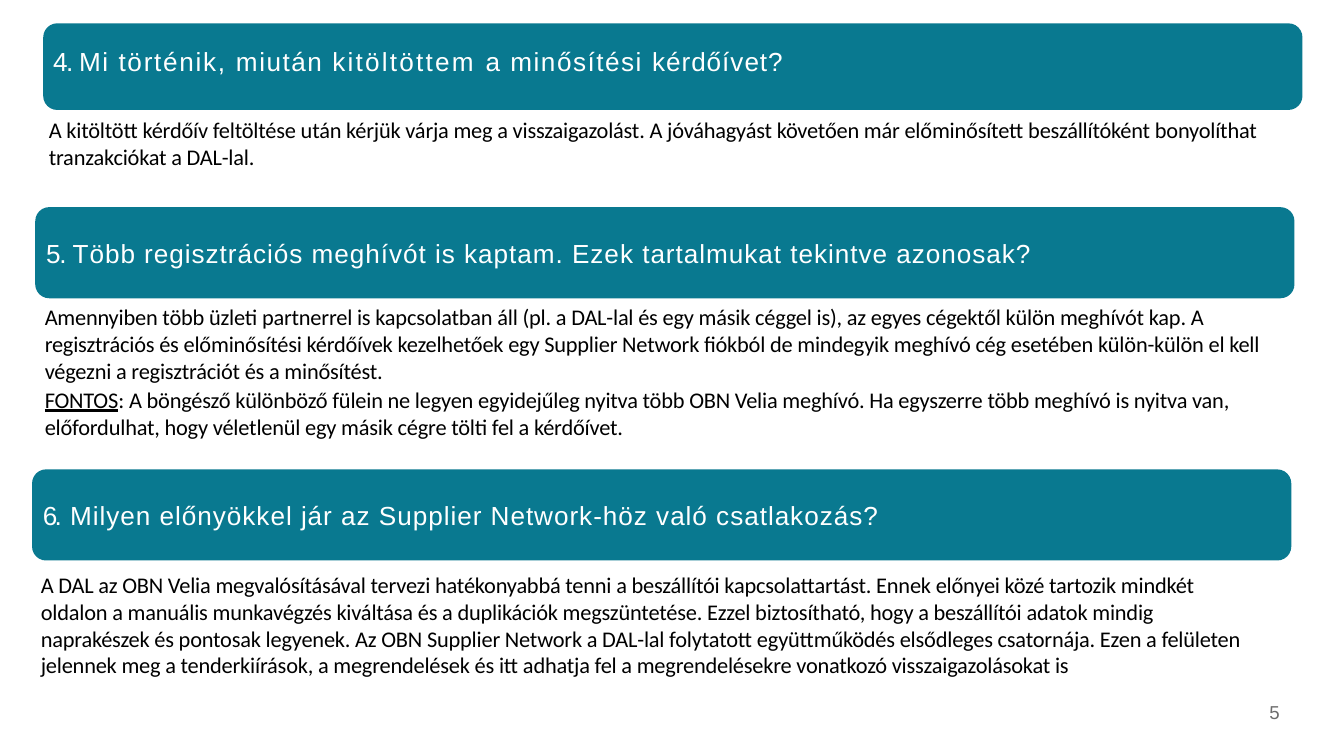
from pptx import Presentation
from pptx.dml.color import RGBColor
from pptx.enum.shapes import MSO_SHAPE
from pptx.enum.text import MSO_ANCHOR, MSO_AUTO_SIZE, PP_ALIGN
from pptx.util import Pt

COLORS = {"banner": "097990", "question": "FFFFFF", "answer": "000000", "page": "6D6D6D"}
BANNER_WIDTH = 674.6
CORNER_RADIUS = 7.5

QUESTIONS = [
    {
        "banner": (23.2, 12.5, 46.4),
        "question_at": (27.4, 22.3, 658, 18),
        "question": [("4. ", -0.8), ("Mi ", 0.8), ("történik, ", 0.9), ("miután ", 0.8),
                     ("kitöltöttem ", 1.2), ("a minősítési ", 0.8), ("kérdőívet?", 0.5)],
        "answer_at": (25.2, 60.5, 652.3, 30.2),
        "answer": [("", "A kitöltött kérdőív feltöltése után kérjük várja meg a visszaigazolást. "
                        "A jóváhagyást követően már előminősített beszállítóként bonyolíthat "
                        "tranzakciókat a DAL-lal.")],
    },
    {
        "banner": (18.9, 111, 48.8),
        "question_at": (23.7, 125.3, 655, 18),
        "question": [("5. ", -0.7),
                     ("Több regisztrációs meghívót is kaptam. Ezek tartalmukat tekintve azonosak?", 0.5)],
        "answer_at": (23, 160.6, 654.5, 75),
        "answer": [("", "Amennyiben több üzleti partnerrel is kapcsolatban áll (pl. a DAL-lal és egy "
                        "másik céggel is), az egyes cégektől külön meghívót kap. A regisztrációs és "
                        "előminősítési kérdőívek kezelhetőek egy Supplier Network fiókból de mindegyik "
                        "meghívó cég esetében külön-külön el kell végezni a regisztrációt és a minősítést."),
                   ("FONTOS", ": A böngésző különböző fülein ne legyen egyidejűleg nyitva több OBN Velia "
                              "meghívó. Ha egyszerre több meghívó is nyitva van, előfordulhat, hogy "
                              "véletlenül egy másik cégre tölti fel a kérdőívet.")],
    },
    {
        "banner": (17.2, 251.5, 48.8),
        "question_at": (22, 265.8, 578, 18),
        "question": [("6.", -1.5),
                     (" Milyen előnyökkel jár az Supplier Network-höz való csatlakozás?", 0.5)],
        "answer_at": (20.9, 304, 650.2, 59),
        "answer": [("", "A DAL az OBN Velia megvalósításával tervezi hatékonyabbá tenni a beszállítói "
                        "kapcsolattartást. Ennek előnyei közé tartozik mindkét oldalon a manuális "
                        "munkavégzés kiváltása és a duplikációk megszüntetése. Ezzel biztosítható, hogy a "
                        "beszállítói adatok mindig naprakészek és pontosak legyenek. Az OBN Supplier "
                        "Network a DAL-lal folytatott együttműködés elsődleges csatornája. Ezen a "
                        "felületen jelennek meg a tenderkiírások, a megrendelések és itt adhatja fel a "
                        "megrendelésekre vonatkozó visszaigazolásokat is")],
    },
]


def add_banner(slide, left, top, height):
    banner = slide.shapes.add_shape(
        MSO_SHAPE.ROUNDED_RECTANGLE, Pt(left), Pt(top), Pt(BANNER_WIDTH), Pt(height))
    banner.adjustments[0] = CORNER_RADIUS / height
    banner.shadow.inherit = False
    banner.fill.solid()
    banner.fill.fore_color.rgb = RGBColor.from_string(COLORS["banner"])
    banner.line.fill.background()


def prepare_frame(holder):
    frame = holder.text_frame
    frame.word_wrap = True
    frame.auto_size = MSO_AUTO_SIZE.NONE
    frame.vertical_anchor = MSO_ANCHOR.TOP
    frame.margin_left, frame.margin_top = Pt(1), Pt(1.9)
    frame.margin_right = frame.margin_bottom = 0
    return frame


def add_text_box(slide, place):
    return prepare_frame(slide.shapes.add_textbox(*map(Pt, place)))


def add_run(paragraph, text, size, font_name, color, spacing):
    run = paragraph.add_run()
    run.text = text
    run.font.size = Pt(size)
    run.font.name = font_name
    run.font.color.rgb = RGBColor.from_string(COLORS[color])
    run._r.get_or_add_rPr().set("spc", str(round(spacing * 100)))
    return run


def fill_question(frame, pieces):
    paragraph = frame.paragraphs[0]
    paragraph.alignment = PP_ALIGN.LEFT
    for text, spacing in pieces:
        add_run(paragraph, text, 14, "Arial", "question", spacing)


def place_title(slide, place):
    title = slide.shapes.title
    title.left, title.top, title.width, title.height = map(Pt, place)
    return prepare_frame(title)


def add_answer(slide, place, paragraphs):
    frame = add_text_box(slide, place)
    for index, (keyword, text) in enumerate(paragraphs):
        paragraph = frame.add_paragraph() if index else frame.paragraphs[0]
        if index:
            paragraph.space_before = Pt(1)
        if keyword:
            add_run(paragraph, keyword, 12, "Calibri", "answer", -0.1).font.underline = True
        add_run(paragraph, text, 12, "Calibri", "answer", -0.1)


def add_page_number(slide, number):
    frame = add_text_box(slide, (679, 373.7, 10, 13.7))
    frame.word_wrap = False
    add_run(frame.paragraphs[0], number, 10, "Arial", "page", -0.5)


def main():
    presentation = Presentation()
    presentation.slide_width, presentation.slide_height = Pt(720), Pt(405)
    slide = presentation.slides.add_slide(presentation.slide_layouts[5])
    for entry in QUESTIONS:
        add_banner(slide, *entry["banner"])
    for index, entry in enumerate(QUESTIONS):
        place_question = add_text_box if index else place_title
        fill_question(place_question(slide, entry["question_at"]), entry["question"])
        add_answer(slide, entry["answer_at"], entry["answer"])
    title = slide.shapes.title._element
    title.getparent().append(title)
    add_page_number(slide, "5")
    presentation.save("out.pptx")


if __name__ == "__main__":
    main()
